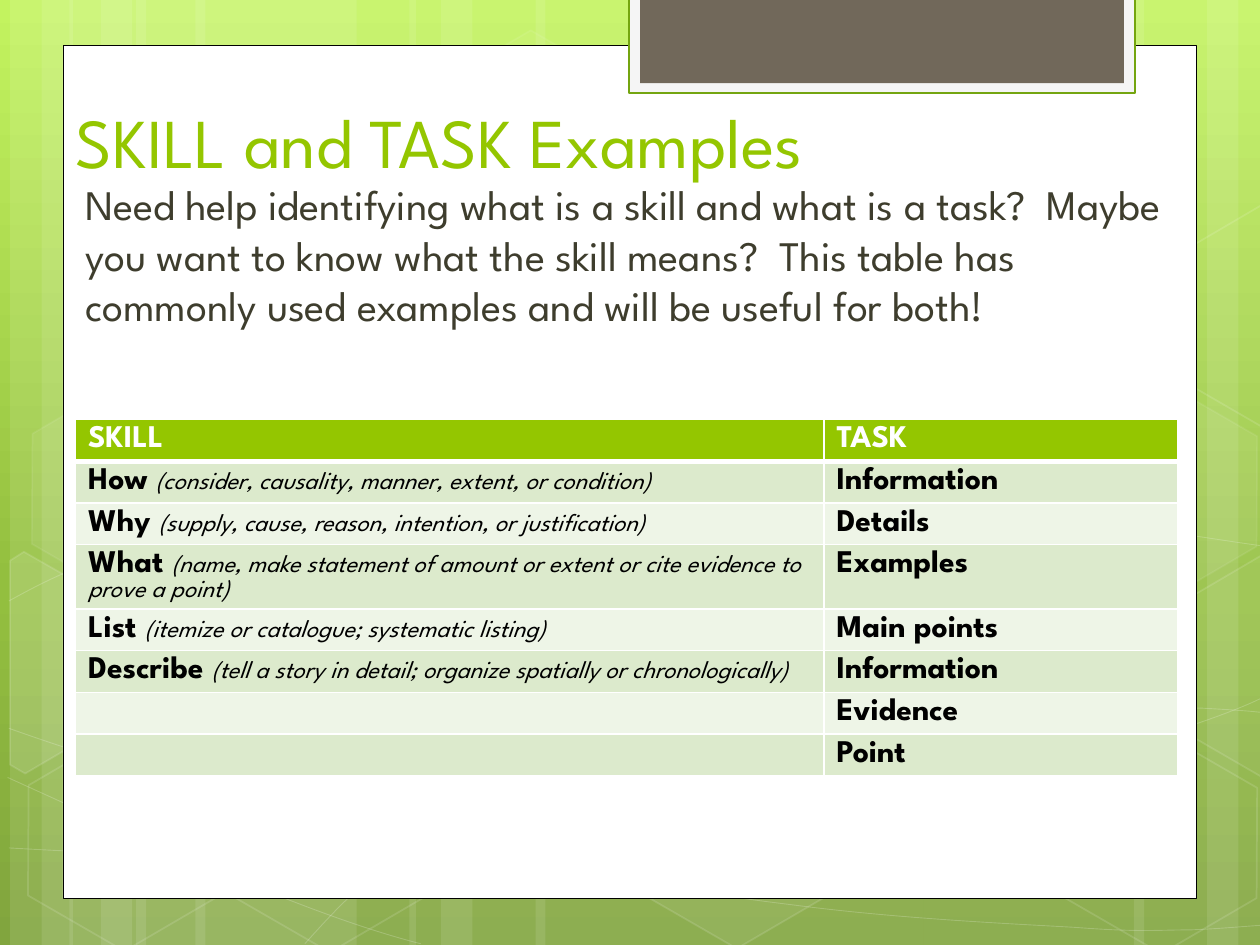
from copy import deepcopy

from lxml import etree
from pptx import Presentation
from pptx import util as u
from pptx.dml.color import RGBColor
from pptx.enum import shapes, text
from pptx.oxml.ns import qn

COLORS = {
    "white": "FFFFFF", "black": "000000", "lime": "94C600", "edge": "74A510",
    "taupe": "71685A", "mist": "F5F5F5", "ink": "3E3D2D",
    "band": "DCEACC", "pale": "EEF5E7",
    "sky": "C3F35F", "leaf": "93BF3F", "moss": "81A53E",
}
FONT = "League Spartan"

deck = Presentation()
deck.slide_width, deck.slide_height = u.Inches(10), u.Inches(7.5)
COLUMN = deck.slide_width / 10    # ten columns across, rows of the same size down


def paint(shape, fill=None, line=None, width=1, fill_alpha=100, line_alpha=100):
    """Set fill and outline, with opacity in percent."""
    shape.shadow.inherit = False
    for target, name, alpha, place in (
            (shape.fill, fill, fill_alpha, "./p:spPr/a:solidFill/a:srgbClr"),
            (shape.line.fill, line, line_alpha, "./p:spPr/a:ln/a:solidFill/a:srgbClr")):
        if name is None:
            target.background()
            continue
        target.solid()
        target.fore_color.rgb = RGBColor.from_string(COLORS[name])
        if alpha < 100:
            color = shape.element.xpath(place)[0]
            etree.SubElement(color, qn("a:alpha")).set("val", str(alpha * 1000))
    if line:
        shape.line.width = u.Pt(width)


def write(para, words, size, color, bold=False, italic=False):
    """Add one formatted run."""
    span = para.add_run()
    span.text = words
    span.font.name, span.font.size = FONT, u.Pt(size)
    span.font.bold, span.font.italic = bold, italic
    span.font.color.rgb = RGBColor.from_string(COLORS[color])


page = deck.slides.add_slide(deck.slide_layouts[1])

# Background gradient, top to bottom
backdrop = page.background.fill
backdrop.gradient()
backdrop.gradient_angle = 270
stop_list = page.element.xpath(".//a:gsLst")[0]
stop_list.insert(1, deepcopy(stop_list[0]))
for stop, (position, name) in zip(backdrop.gradient_stops,
                                  ((0, "sky"), (0.62, "leaf"), (1, "moss"))):
    stop.position = position
    stop.color.rgb = RGBColor.from_string(COLORS[name])

# Translucent vertical stripes: left column, width in columns
stripes = [(1.08, 1.75), (0.08, 0.5), (0.33, 0.83), (1.55, 1.75), (0.55, 0.5),
           (0.8, 0.83), (7.33, 1.75), (9.58, 0.5), (9, 0.83), (4.25, 3.08),
           (3.25, 0.5), (3.5, 0.83)]
for left, width in stripes:
    stripe = page.shapes.add_shape(shapes.MSO_SHAPE.RECTANGLE, int(left * COLUMN), 0,
                                   int(width * COLUMN), deck.slide_height)
    paint(stripe, "white", fill_alpha=10)

# Thin waves: a start point, then cubic curves of two controls and an end
waves = [
    [(0.07, 6.73), (0.61, 6.76), (1.15, 6.79), (1.9, 6.78), (2.65, 6.77), (3.58, 6.75),
     (4.58, 6.65), (5.58, 6.55), (7, 6.36), (7.92, 6.17), (8.83, 5.98), (9.77, 5.68),
     (10.07, 5.51)],
    [(0.07, 4.77), (0.36, 4.61), (0.65, 4.46), (1.21, 4.31), (1.78, 4.16), (2.59, 3.94),
     (3.47, 3.87), (4.36, 3.8), (5.44, 3.79), (6.54, 3.87), (7.64, 3.95), (9.47, 4.26),
     (10.07, 4.34)],
    [(0.06, 6.17), (1.27, 6.72), (2.47, 7.27), (3.34, 7.49)],
    [(0.07, 5.78), (0.38, 5.89), (0.7, 6), (1.28, 6.16), (1.86, 6.31), (2.73, 6.56),
     (3.57, 6.73), (4.4, 6.9), (5.45, 7.08), (6.28, 7.18), (7.11, 7.29), (8, 7.33),
     (8.53, 7.36), (9.05, 7.4), (9.19, 7.38), (9.45, 7.38), (9.71, 7.37), (9.89, 7.35),
     (10.07, 7.34)],
    [(2.42, 7.49), (2.6, 7.29), (2.78, 7.09), (3.02, 6.91), (3.26, 6.73), (3.6, 6.53),
     (3.88, 6.39), (4.16, 6.25), (4.33, 6.19), (4.7, 6.09), (5.06, 5.99), (5.73, 5.85),
     (6.08, 5.78), (6.44, 5.71), (6.49, 5.71), (6.8, 5.69), (7.11, 5.66), (7.6, 5.63),
     (7.94, 5.62), (8.29, 5.61), (8.86, 5.62), (8.86, 5.62), (9.08, 5.62), (9.31, 5.62),
     (9.53, 5.62), (9.71, 5.63), (9.88, 5.64), (9.97, 5.65), (10.06, 5.66),
     (10.03, 5.65), (10.06, 5.66)],
]
for wave in waves:
    knots = [(x * 1000, y * 1000) for x, y in wave]
    outline = page.shapes.build_freeform(*knots[0], scale=COLUMN / 1000)
    outline.add_line_segments(knots[1:], close=False)
    ribbon = outline.convert_to_shape()
    # Every three straight segments become one curve
    segments = ribbon.element.xpath(".//a:lnTo")
    track = segments[0].getparent()
    for first in range(0, len(segments), 3):
        curve = etree.SubElement(track, qn("a:cubicBezTo"))
        for segment in segments[first:first + 3]:
            curve.append(segment[0])
            track.remove(segment)
    paint(ribbon, line="white", width=0.5, line_alpha=20)

# Tilted hexagons: left, top, fill opacity (0 is hollow), line opacity
hexagons = [(3.34, 0.36, 4, 8), (4.97, 5.89, 6, 12), (0.11, 5.91, 0, 12),
            (0.14, 3.12, 7, 8), (1.74, 5.92, 0, 12), (7.53, 4.53, 10, 12),
            (8.34, 5.93, 0, 12), (8.34, 3.14, 7, 8)]
for left, top, inside, edge in hexagons:
    hexagon = page.shapes.add_shape(shapes.MSO_SHAPE.HEXAGON, int(left * COLUMN),
                                    int(top * COLUMN), int(1.75 * COLUMN),
                                    int(1.52 * COLUMN))
    hexagon.adjustments[0] = 0.285
    hexagon.rotation = 30
    paint(hexagon, "white" if inside else None, "white", 1, inside, edge)

# Hexagons cut by the slide's sides
cut_hexagons = [
    (10, [(0.08, 4.45), (0.19, 4.38), (0.96, 4.82), (0.95, 5.7), (0.2, 6.14), (0.08, 6.07)]),
    (4, [(9.26, 4.85), (10.01, 4.41), (10.09, 4.46), (10.09, 6.13), (10.02, 6.17),
         (9.26, 5.73)]),
    (0, [(9.26, 2.07), (10.01, 1.63), (10.1, 1.68), (10.09, 3.35), (10.02, 3.39),
         (9.26, 2.95)]),
]
for inside, corners in cut_hexagons:
    corners = [(x * 1000, y * 1000) for x, y in corners]
    outline = page.shapes.build_freeform(*corners[0], scale=COLUMN / 1000)
    outline.add_line_segments(corners[1:], close=True)
    paint(outline.convert_to_shape(), "white" if inside else None, "white", 1, inside, 12)

# White sheet and the tab at its top
panels = [((0.5, 0.36, 9, 6.77), "white", "black", 0.5),
          ((4.99, -0.02, 4.02, 0.76), "mist", "edge", 1.25),
          ((5.08, -0.02, 3.84, 0.68), "taupe", None, 0)]
for place, fill, line, width in panels:
    panel = page.shapes.add_shape(shapes.MSO_SHAPE.RECTANGLE,
                                  *(int(length * COLUMN) for length in place))
    paint(panel, fill, line, width)

# Title and introduction, brought in front of the sheet
title, body = page.placeholders
for box, top, height, anchor, words, size, color in (
        (title, 0.3, 1.25, text.MSO_ANCHOR.BOTTOM, "SKILL and TASK Examples", 40, "lime"),
        (body, 1.32, 5.43, text.MSO_ANCHOR.TOP,
         "Need help identifying what is a skill and what is a task?  Maybe you want to know "
         "what the skill means?  This table has commonly used examples and will be useful "
         "for both!", 24, "ink")):
    box.element.getparent().append(box.element)
    box.left, box.width = int(0.5 * COLUMN), int(9 * COLUMN)
    box.top, box.height = int(top * COLUMN), int(height * COLUMN)
    frame = box.text_frame
    frame.word_wrap, frame.auto_size = True, text.MSO_AUTO_SIZE.NONE
    frame.vertical_anchor = anchor
    frame.margin_left = frame.margin_right = u.Inches(0.1)
    frame.margin_top = frame.margin_bottom = u.Inches(0.1)
    para = frame.paragraphs[0]
    para.alignment = text.PP_ALIGN.LEFT
    para.space_before = u.Pt(0)
    para.line_spacing = 1.0
    write(para, words, size, color)
indents = para._p.get_or_add_pPr()
indents.set("marL", str(u.Inches(0.075)))
indents.set("indent", "0")
etree.SubElement(indents, qn("a:buNone"))

# Table of skills (with their meaning) and tasks
entries = [
    ("SKILL", "", "TASK"),
    ("How ", "(consider, causality, manner, extent, or condition)", "Information"),
    ("Why ", "(supply, cause, reason, intention, or justification)", "Details"),
    ("What ", "(name, make statement of amount or extent or cite evidence to prove a point)",
     "Examples"),
    ("List ", "(itemize or catalogue; systematic listing)", "Main points"),
    ("Describe ", "(tell a story in detail; organize spatially or chronologically)",
     "Information"),
    ("", "", "Evidence"),
    ("", "", "Point"),
]
table = page.shapes.add_table(len(entries), 2, int(0.6 * COLUMN), int(3.33 * COLUMN),
                              int(8.75 * COLUMN), int(2.82 * COLUMN)).table
for column, width in zip(table.columns, (5.94, 2.81)):
    column.width = int(width * COLUMN)
for index, (skill, meaning, task) in enumerate(entries):
    table.rows[index].height = int((0.51 if skill == "What " else 0.33) * COLUMN)
    fill = "lime" if index == 0 else ("pale", "band")[index % 2]
    ink = "black" if index else "white"
    for cell, label, note in zip(table.rows[index].cells, (skill, task), (meaning, "")):
        cell.fill.solid()
        cell.fill.fore_color.rgb = RGBColor.from_string(COLORS[fill])
        # White rules, thicker below the header
        for order, side in enumerate(("lnL", "lnR", "lnT", "lnB")):
            thick = (index, side) in ((0, "lnB"), (1, "lnT"))
            rule = etree.Element(qn("a:" + side), w=str(u.Pt(3 if thick else 1)))
            solid = etree.SubElement(rule, qn("a:solidFill"))
            etree.SubElement(solid, qn("a:srgbClr"), val=COLORS["white"])
            cell._tc.get_or_add_tcPr().insert(order, rule)
        para = cell.text_frame.paragraphs[0]
        if label:
            write(para, label, 18, ink, bold=True)
        else:
            cell.margin_top = cell.margin_bottom = 0
        if note:
            write(para, note, 14, ink, italic=True)

deck.save("out.pptx")
